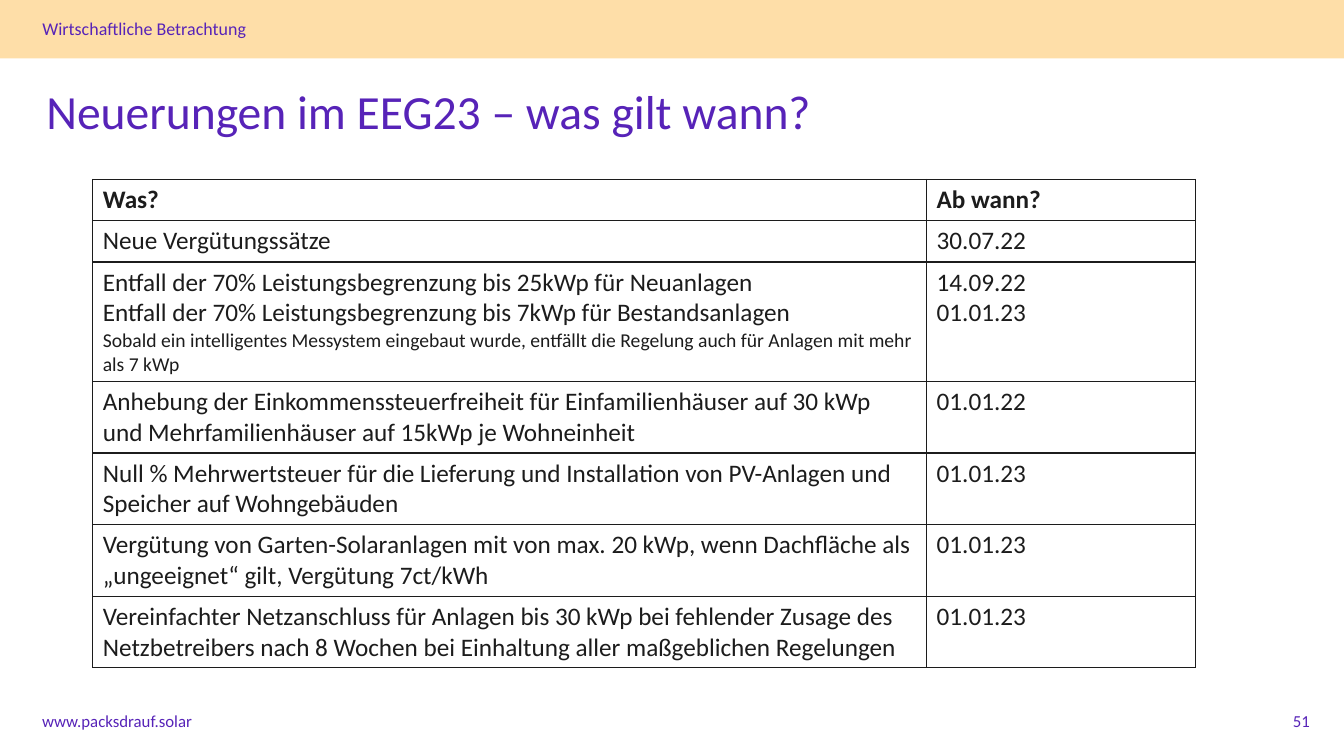
from lxml import etree
from pptx import Presentation
from pptx import util as u
from pptx.dml.color import RGBColor
from pptx.enum import shapes, text
from pptx.oxml import ns

PURPLE = RGBColor(0x57, 0x23, 0xB8)
SAND = RGBColor(0xFE, 0xDE, 0xA8)
INK = RGBColor(0x1C, 0x1C, 0x1C)

ROWS = [
    (["Was?"], ["Ab wann?"]),
    (["Neue Vergütungssätze"], ["30.07.22"]),
    (["Entfall der 70% Leistungsbegrenzung bis 25kWp für Neuanlagen",
      "Entfall der 70% Leistungsbegrenzung bis 7kWp für Bestandsanlagen",
      "Sobald ein intelligentes Messystem eingebaut wurde, entfällt die Regelung "
      "auch für Anlagen mit mehr als 7 kWp"],
     ["14.09.22", "01.01.23"]),
    (["Anhebung der Einkommenssteuerfreiheit für Einfamilienhäuser auf 30 kWp "
      "und Mehrfamilienhäuser auf 15kWp je Wohneinheit"], ["01.01.22"]),
    (["Null % Mehrwertsteuer für die Lieferung und Installation von PV-Anlagen "
      "und Speicher auf Wohngebäuden"], ["01.01.23"]),
    (["Vergütung von Garten-Solaranlagen mit von max. 20 kWp, wenn Dachfläche als "
      "„ungeeignet“ gilt, Vergütung 7ct/kWh"], ["01.01.23"]),
    (["Vereinfachter Netzanschluss für Anlagen bis 30 kWp bei fehlender Zusage des "
      "Netzbetreibers nach 8 Wochen bei Einhaltung aller maßgeblichen Regelungen"],
     ["01.01.23"]),
]
COLUMN_WIDTHS = (8.27, 2.67)
ROW_HEIGHT = 0.41
NOTE_LINE = 2


class SlideBuilder:
    font = "Calibri"

    def __init__(self, slide):
        self.slide = slide

    def add_span(self, para, words, size, color, bold=False):
        span = para.add_run()
        span.text = words
        span.font.name = self.font
        span.font.size = u.Pt(size)
        span.font.color.rgb = color
        span.font.bold = bold

    def band(self, left, top, width, height, color):
        band = self.slide.shapes.add_shape(
            shapes.MSO_SHAPE.RECTANGLE, *map(u.Inches, (left, top, width, height)))
        band.shadow.inherit = False
        band.fill.solid()
        band.fill.fore_color.rgb = color
        band.line.fill.background()

    def fill_box(self, box, words, size, anchor, align, spacing=1.0):
        frame = box.text_frame
        frame.word_wrap = True
        frame.auto_size = text.MSO_AUTO_SIZE.NONE
        frame.vertical_anchor = anchor
        para = frame.paragraphs[0]
        para.alignment = align
        para.line_spacing = spacing
        para.space_before = u.Pt(0)
        self.add_span(para, words, size, PURPLE)

    def placeholder(self, index, place, words, size, anchor, spacing):
        box = self.slide.placeholders[index]
        box.left, box.top, box.width, box.height = map(u.Inches, place)
        self.fill_box(box, words, size, anchor, text.PP_ALIGN.LEFT, spacing)

    def footer(self, left, words, align):
        box = self.slide.shapes.add_textbox(*map(u.Inches, (left, 6.95, 3, 0.4)))
        self.fill_box(box, words, 12, text.MSO_ANCHOR.MIDDLE, align)

    def border(self, cell):
        properties = cell._tc.get_or_add_tcPr()
        for position, side in enumerate(("lnL", "lnR", "lnT", "lnB")):
            line = etree.Element(ns.qn(f"a:{side}"), w=str(u.Pt(1)))
            fill = etree.SubElement(line, ns.qn("a:solidFill"))
            etree.SubElement(fill, ns.qn("a:srgbClr"), val=str(INK))
            properties.insert(position, line)

    def table(self, left, top, height, widths, rows):
        frame = self.slide.shapes.add_table(
            len(rows), len(widths), u.Inches(left), u.Inches(top),
            u.Inches(sum(widths)), u.Inches(height))
        table = frame.table
        table.horz_banding = False
        for column, width in zip(table.columns, widths):
            column.width = u.Inches(width)
        for row_index, row in enumerate(rows):
            table.rows[row_index].height = u.Inches(ROW_HEIGHT)
            for column_index, lines in enumerate(row):
                cell = table.cell(row_index, column_index)
                cell.fill.background()
                self.border(cell)
                body = cell.text_frame
                for line_index, words in enumerate(lines):
                    para = body.add_paragraph() if line_index else body.paragraphs[0]
                    size = 14 if line_index == NOTE_LINE else 18
                    self.add_span(para, words, size, INK, bold=row_index == 0)
        frame.height = u.Inches(height)


def main():
    deck = Presentation()
    deck.slide_width, deck.slide_height = u.Inches(13.33), u.Inches(7.5)
    page = SlideBuilder(deck.slides.add_slide(deck.slide_layouts[0]))
    tree = page.slide.shapes._spTree
    page.band(0, 0, 13.33, 0.58, SAND)
    tree.insert(2, tree[-1])
    page.placeholder(0, (0.36, 0.78, 11.5, 0.71), "Neuerungen im EEG23 – was gilt wann?",
                     34, text.MSO_ANCHOR.MIDDLE, 0.9)
    page.placeholder(1, (0.32, 0.18, 6.35, 0.27), "Wirtschaftliche Betrachtung",
                     12.8, text.MSO_ANCHOR.TOP, 0.7)
    page.footer(0.32, "www.packsdrauf.solar", text.PP_ALIGN.LEFT)
    page.footer(10.09, "51", text.PP_ALIGN.RIGHT)
    page.table(0.92, 1.78, 4.78, COLUMN_WIDTHS, ROWS)
    deck.save("out.pptx")


if __name__ == "__main__":
    main()
